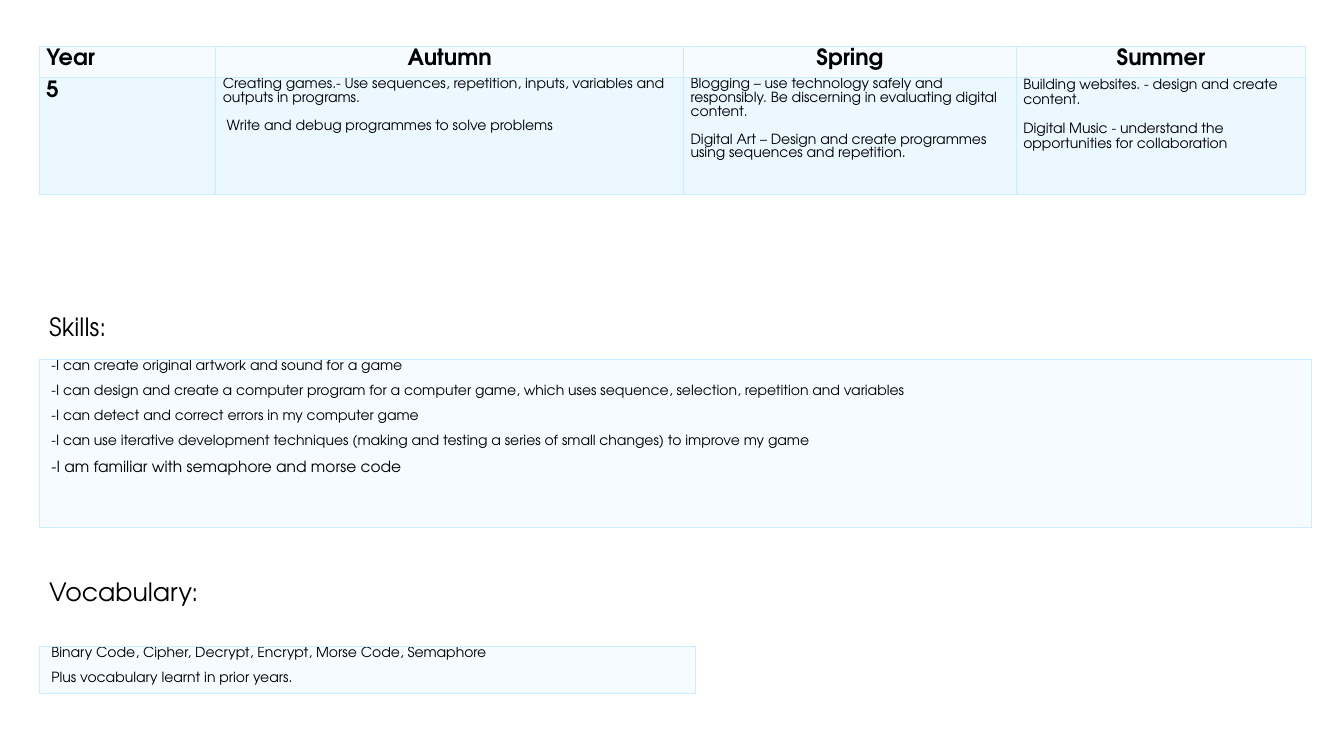
import lxml.etree
import pptx
import pptx.dml.color
import pptx.enum.text
import pptx.oxml.ns
import pptx.util

Inches = pptx.util.Inches
Pt = pptx.util.Pt
RGBColor = pptx.dml.color.RGBColor
ALIGN = pptx.enum.text.PP_ALIGN

BLACK = RGBColor(0x00, 0x00, 0x00)
BORDER = RGBColor(0xCC, 0xEC, 0xFF)
PALE = RGBColor(0xF6, 0xFB, 0xFF)
LIGHT = RGBColor(0xEC, 0xF8, 0xFF)
FONT = "TeX Gyre Adventor"
LEFT = 0.39

TERMS = ["Year", "Autumn", "Spring", "Summer"]
TERM_WIDTHS = [1.75, 4.64, 3.3, 2.87]
TERM_TOPICS = [
    ["Creating games.- Use sequences, repetition, inputs, variables and outputs in programs.",
     " Write and debug programmes to solve problems"],
    ["Blogging – use technology safely and responsibly. Be discerning in evaluating digital content.",
     "Digital Art – Design and create programmes using sequences and repetition."],
    ["Building websites. - design and create content.",
     "Digital Music - understand the opportunities for collaboration"],
]
SKILLS = [
    "-I can create original artwork and sound for a game",
    "-I can design and create a computer program for a computer game, which uses sequence, selection, repetition and variables",
    "-I can detect and correct errors in my computer game",
    "-I can use iterative development techniques (making and testing a series of small changes) to improve my game",
    "-I am familiar with semaphore and morse code",
]
VOCABULARY = [
    "Binary Code, Cipher, Decrypt, Encrypt, Morse Code, Semaphore",
    "Plus vocabulary learnt in prior years.",
]


def write_text(frame, lines, size=10, bold=False, align=ALIGN.LEFT, spacing=1.0, after=0):
    for index, line in enumerate(lines):
        paragraph = frame.paragraphs[0] if index == 0 else frame.add_paragraph()
        paragraph.alignment = align
        paragraph.line_spacing = spacing
        paragraph.space_after = Pt(after)
        run = paragraph.add_run()
        run.text = line
        run.font.name = FONT
        run.font.size = Pt(size)
        run.font.bold = bold
        run.font.color.rgb = BLACK


def style_cell(cell, fill, inset):
    cell.margin_left = cell.margin_right = Inches(inset)
    cell.margin_top = cell.margin_bottom = 0
    properties = cell._tc.get_or_add_tcPr()
    for side in ("a:lnL", "a:lnR", "a:lnT", "a:lnB"):
        line = lxml.etree.SubElement(properties, pptx.oxml.ns.qn(side), w=str(Pt(1)))
        solid = lxml.etree.SubElement(line, pptx.oxml.ns.qn("a:solidFill"))
        lxml.etree.SubElement(solid, pptx.oxml.ns.qn("a:srgbClr"), val=str(BORDER))
    cell.fill.solid()
    cell.fill.fore_color.rgb = fill


def add_grid(slide, left, top, widths, heights, fills, inset):
    frame = slide.shapes.add_table(len(heights), len(widths), Inches(left), Inches(top),
                                   Inches(sum(widths)), Inches(sum(heights)))
    table = frame.table
    table.first_row = False
    table.horz_banding = False
    for column, width in zip(table.columns, widths):
        column.width = Inches(width)
    for row, height, fill in zip(table.rows, heights, fills):
        row.height = Inches(height)
        for cell in row.cells:
            style_cell(cell, fill, inset)
    return table


def add_year_plan(slide, left, top):
    table = add_grid(slide, left, top, TERM_WIDTHS, [0.31, 1.16], [PALE, LIGHT], 0.07)
    for index, term in enumerate(TERMS):
        align = ALIGN.CENTER if index else ALIGN.LEFT
        write_text(table.cell(0, index).text_frame, [term],
                   size=16, bold=True, align=align, spacing=1.15)
    write_text(table.cell(1, 0).text_frame, ["5"], size=16, bold=True, spacing=1.15)
    for index, topics in enumerate(TERM_TOPICS, start=1):
        spacing = 1.15 if TERMS[index] == "Summer" else 1.07
        write_text(table.cell(1, index).text_frame, topics, spacing=spacing, after=10)


def add_list_box(slide, left, top, width, height, lines):
    table = add_grid(slide, left, top, [width], [height], [PALE], 0.12)
    frame = table.cell(0, 0).text_frame
    write_text(frame, lines, spacing=1.07, after=8)
    return frame


def add_heading(slide, left, top, width, height, text):
    box = slide.shapes.add_textbox(Inches(left), Inches(top), Inches(width), Inches(height))
    box.text_frame.word_wrap = True
    write_text(box.text_frame, [text], size=18)


def main():
    presentation = pptx.Presentation()
    presentation.slide_width = Inches(13.33)
    presentation.slide_height = Inches(7.5)
    slide = presentation.slides.add_slide(presentation.slide_layouts[6])
    add_year_plan(slide, LEFT, 0.46)
    add_heading(slide, LEFT, 3.04, 12.06, 0.71, "Skills:")
    skills = add_list_box(slide, LEFT, 3.57, 12.62, 1.66, SKILLS)
    skills.paragraphs[-1].runs[0].font.size = Pt(11)
    add_heading(slide, LEFT, 5.67, 2.84, 0.4, "Vocabulary:")
    add_list_box(slide, LEFT, 6.41, 6.51, 0.47, VOCABULARY)
    presentation.save("out.pptx")


if __name__ == "__main__":
    main()
